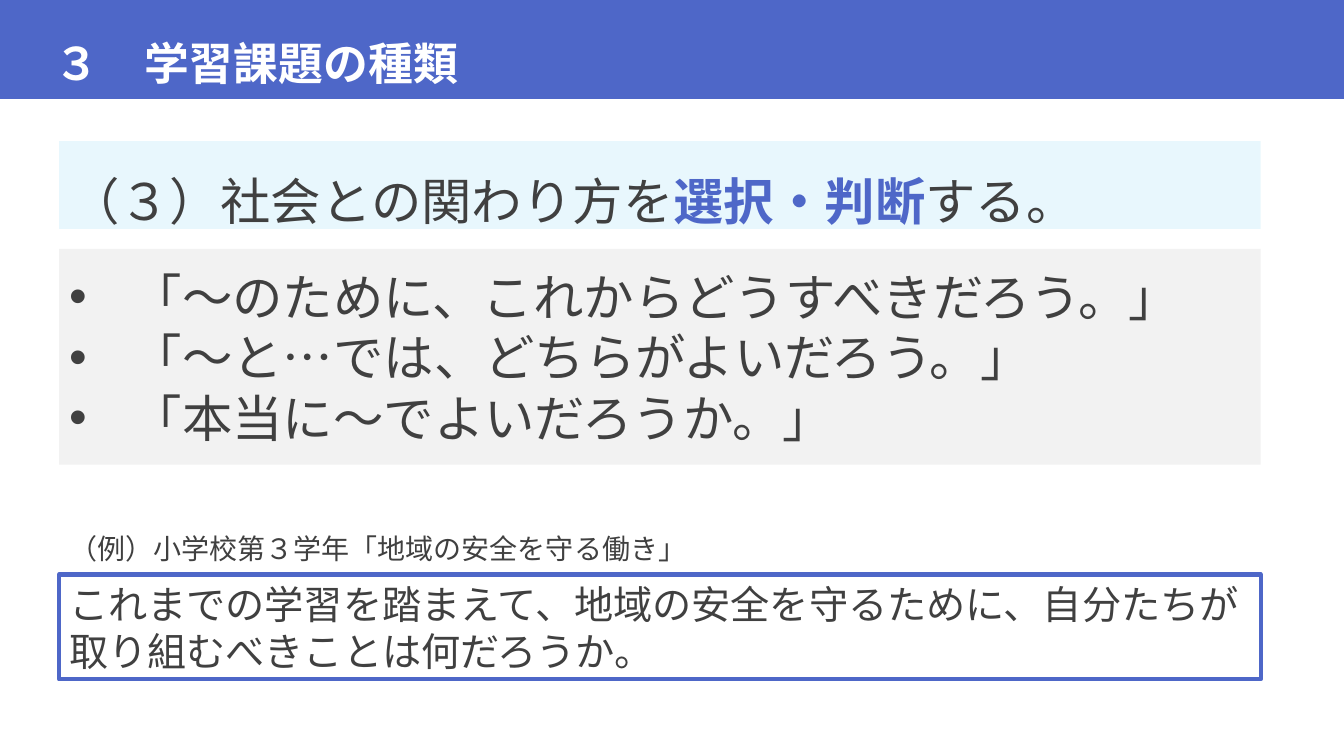
"""Build the slide on kinds of learning tasks: choosing and judging."""
import pptx
import pptx.dml.color
import pptx.enum.shapes
import pptx.enum.text
import pptx.oxml
import pptx.oxml.ns
import pptx.util
from dataclasses import dataclass


@dataclass(frozen=True)
class Theme:
    font: str = "Noto Sans CJK JP"
    accent: str = "4E67C8"
    ink: str = "404040"
    white: str = "FFFFFF"
    pale_blue: str = "DFF5FD"
    pale_gray: str = "F2F2F2"
    title: int = 32
    body: int = 36
    task: int = 28
    caption: int = 20


theme = Theme()
rgb = pptx.dml.color.RGBColor.from_string
prs = pptx.Presentation()
prs.slide_width = pptx.util.Inches(13.33)
prs.slide_height = pptx.util.Inches(7.5)
LEFT, WIDTH = 4.4, 89.4


def place(sp, left, top, width, height, fill=None):
    """Put a shape at percentages of the slide and give it a plain look."""
    sp.left, sp.width = (round(prs.slide_width * v / 100) for v in (left, width))
    sp.top, sp.height = (round(prs.slide_height * v / 100) for v in (top, height))
    if fill:
        sp.fill.solid()
        sp.fill.fore_color.rgb = rgb(fill)
    tf = sp.text_frame
    tf.word_wrap = True
    tf.auto_size = pptx.enum.text.MSO_AUTO_SIZE.NONE
    tf.vertical_anchor = pptx.enum.text.MSO_ANCHOR.MIDDLE
    return tf


def style(p, size, color=theme.ink, bold=False, spacing=1.0):
    """Format a paragraph, East Asian font included."""
    p.alignment = pptx.enum.text.PP_ALIGN.LEFT
    p.line_spacing = spacing
    p.font.size = pptx.util.Pt(size)
    p.font.bold = bold
    p.font.color.rgb = rgb(color)
    p.font.name = theme.font
    latin = p._p.pPr.find(".//" + pptx.oxml.ns.qn("a:latin"))
    latin.addnext(pptx.oxml.parse_xml(
        f'<a:ea {pptx.oxml.ns.nsdecls("a")} typeface="{theme.font}"/>'))


s = prs.slides.add_slide(prs.slide_layouts[5])
tf = place(s.shapes.title, 0, 0, 100, 13.07, theme.accent)
tf.margin_left = pptx.util.Inches(0.54)
tf.text = "３　学習課題の種類"
style(tf.paragraphs[0], theme.title, theme.white, bold=True, spacing=1.5)

panels = {}
for name, top, height, fill in (
    ("questions", 32.93, 28.53, theme.pale_gray),
    ("heading", 18.67, 11.6, theme.pale_blue),
    ("task", 76, 13.87, theme.white),
):
    sp = s.shapes.add_shape(pptx.enum.shapes.MSO_SHAPE.RECTANGLE, 0, 0, 0, 0)
    sp.shadow.inherit = False
    sp.line.fill.background()
    place(sp, LEFT, top, WIDTH, height, fill)
    panels[name] = sp

tf = panels["questions"].text_frame
tf.text = "\n".join((
    "「～のために、これからどうすべきだろう。」",
    "「～と…では、どちらがよいだろう。」",
    "「本当に～でよいだろうか。」",
))
indent = pptx.util.Inches(0.62)
for p in tf.paragraphs:
    style(p, theme.body)
    pPr = p._p.pPr
    pPr.set("marL", str(indent))
    pPr.set("indent", str(-indent))
    defaults = pPr.find(pptx.oxml.ns.qn("a:defRPr"))
    for tag in ('buFont typeface="Arial"', 'buChar char="•"'):
        defaults.addprevious(pptx.oxml.parse_xml(
            f'<a:{tag} {pptx.oxml.ns.nsdecls("a")}/>'))

sp = panels["heading"]
sp.fill._xPr.find(".//" + pptx.oxml.ns.qn("a:srgbClr")).append(
    pptx.oxml.parse_xml(f'<a:alpha {pptx.oxml.ns.nsdecls("a")} val="70000"/>'))
p = sp.text_frame.paragraphs[0]
style(p, theme.body, spacing=1.5)
for text, key in (("（３）社会との関わり方を", False), ("選択・判断", True), ("する。", False)):
    r = p.add_run()
    r.text = text
    r.font.bold = key
    r.font.color.rgb = rgb(theme.accent if key else theme.ink)

sp = panels["task"]
sp.line.color.rgb = rgb(theme.accent)
sp.line.width = pptx.util.Pt(3)
sp.text_frame.text = "これまでの学習を踏まえて、地域の安全を守るために、自分たちが取り組むべきことは何だろうか。"
style(sp.text_frame.paragraphs[0], theme.task)

tf = place(s.shapes.add_textbox(0, 0, 0, 0), LEFT, 69.6, 49.8, 5.87)
tf.vertical_anchor = pptx.enum.text.MSO_ANCHOR.TOP
tf.text = "（例）小学校第３学年「地域の安全を守る働き」"
style(tf.paragraphs[0], theme.caption)

prs.save("out.pptx")
